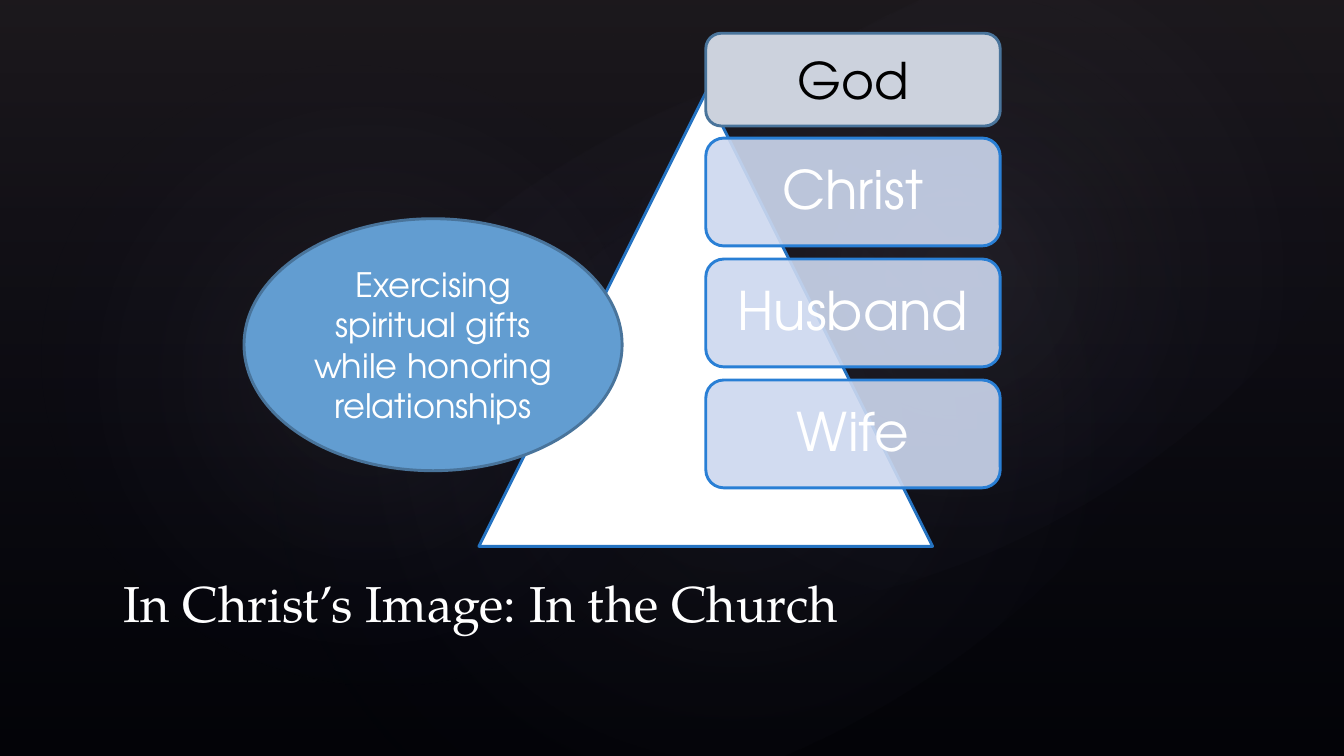
from dataclasses import dataclass

import pptx
import pptx.dml.color
import pptx.enum.shapes
import pptx.enum.text
import pptx.oxml
import pptx.oxml.ns
import pptx.shapes.autoshape
import pptx.util

Inches = pptx.util.Inches
Pt = pptx.util.Pt
RGBColor = pptx.dml.color.RGBColor
Geometry = pptx.enum.shapes.MSO_SHAPE
Anchor = pptx.enum.text.MSO_ANCHOR
Align = pptx.enum.text.PP_ALIGN
qn = pptx.oxml.ns.qn

BLACK = RGBColor(0x00, 0x00, 0x00)
WHITE = RGBColor(0xFF, 0xFF, 0xFF)
NAVY = RGBColor(0x24, 0x28, 0x52)
PLUM = RGBColor(0x50, 0x46, 0x52)
MIST = RGBColor(0xC4, 0xBC, 0xC6)
PALE_BLUE = RGBColor(0xCD, 0xD8, 0xEF)
PALE_GREY = RGBColor(0xCC, 0xD2, 0xDD)
SKY = RGBColor(0x62, 0x9D, 0xD1)
STEEL = RGBColor(0x49, 0x74, 0x9B)
BRIGHT_BLUE = RGBColor(0x29, 0x7F, 0xD5)
DEEP_BLUE = RGBColor(0x25, 0x73, 0xC1)

BODY_FONT = "TeX Gyre Adventor"
TITLE_FONT = "TeX Gyre Pagella"
OUTLINE = Pt(2.08)
Box = tuple[float, float, float, float]


@dataclass
class Stop:
    position: int
    color: RGBColor
    opacity: int


@dataclass
class Backdrop:
    geometry: Geometry
    box: Box
    rotation: float
    stops: list[Stop]
    direction: str


@dataclass
class Figure:
    geometry: Geometry
    box: Box
    fill: RGBColor
    line: RGBColor
    opacity: int = 100
    text: str = ""
    size: int = 36
    color: RGBColor = WHITE
    inset: float = 0.1
    spacing: float = 1.0


def add_plain_shape(geometry: Geometry, box: Box) -> pptx.shapes.autoshape.Shape:
    shape = slide.shapes.add_shape(geometry, *map(Inches, box))
    shape.shadow.inherit = False
    return shape


def draw_backdrop(backdrop: Backdrop) -> None:
    shape = add_plain_shape(backdrop.geometry, backdrop.box)
    shape.rotation = backdrop.rotation
    shape.line.fill.background()
    shape.fill.background()
    stops = "".join(
        f'<a:gs pos="{stop.position * 1000}"><a:srgbClr val="{stop.color}">'
        f'<a:alpha val="{stop.opacity * 1000}"/></a:srgbClr></a:gs>'
        for stop in backdrop.stops
    )
    gradient = pptx.oxml.parse_xml(
        f'<a:gradFill {pptx.oxml.ns.nsdecls("a")} rotWithShape="1">'
        f"<a:gsLst>{stops}</a:gsLst>{backdrop.direction}</a:gradFill>"
    )
    properties = shape.element.spPr
    properties.replace(properties.find(qn("a:noFill")), gradient)


def write_text(shape: pptx.shapes.autoshape.Shape, text: str, frame_format: dict,
               paragraph_format: dict, font_format: dict, color: RGBColor) -> None:
    frame = shape.text_frame
    paragraph = frame.paragraphs[0]
    run = paragraph.add_run()
    run.text = text
    run.font.color.rgb = color
    for target, values in ((frame, frame_format), (paragraph, paragraph_format),
                           (run.font, font_format)):
        for name, value in values.items():
            setattr(target, name, value)


def draw_figure(figure: Figure) -> None:
    shape = add_plain_shape(figure.geometry, figure.box)
    shape.fill.solid()
    shape.fill.fore_color.rgb = figure.fill
    if figure.opacity < 100:
        tint = shape.element.spPr.find(qn("a:solidFill"))[0]
        tint.append(pptx.oxml.parse_xml(
            f'<a:alpha {pptx.oxml.ns.nsdecls("a")} val="{figure.opacity * 1000}"/>'))
    shape.line.color.rgb = figure.line
    shape.line.width = OUTLINE
    if figure.text:
        inset = Inches(figure.inset)
        write_text(
            shape, figure.text,
            {"word_wrap": True, "vertical_anchor": Anchor.MIDDLE,
             "margin_left": inset, "margin_right": inset},
            {"alignment": Align.CENTER, "line_spacing": figure.spacing},
            {"name": BODY_FONT, "size": Pt(figure.size)}, figure.color)


presentation = pptx.Presentation()
presentation.slide_width = Inches(13.33)
presentation.slide_height = Inches(7.5)
slide = presentation.slides.add_slide(presentation.slide_layouts[6])
slide.background.fill.solid()
slide.background.fill.fore_color.rgb = BLACK

# Backdrop: a dark wash and three soft glows
DOWNWARD = '<a:lin ang="5400000" scaled="0"/>'
OUTWARD = ('<a:path path="circle">'
           '<a:fillToRect l="50000" t="50000" r="50000" b="50000"/></a:path>')
draw_backdrop(Backdrop(Geometry.RECTANGLE, (0, 0, 13.33, 7.5), 0,
                       [Stop(0, PLUM, 36), Stop(100, NAVY, 10)], DOWNWARD))
for glow_box, rotation, strength in (
    ((2, 1.14, 10.56, 6.24), 328.7, 7),
    ((0.61, 0.46, 6.06, 6.53), 294.3, 8),
    ((4.78, 0.13, 9.45, 5.2), 328.7, 8),
):
    draw_backdrop(Backdrop(Geometry.OVAL, glow_box, rotation,
                           [Stop(0, MIST, strength), Stop(58, NAVY, 0)], OUTWARD))

# Pyramid with its levels
draw_figure(Figure(Geometry.ISOSCELES_TRIANGLE, (4.75, 0.92, 4.5, 4.5), WHITE, DEEP_BLUE))
for index, level in enumerate(("Christ", "Husband", "Wife")):
    draw_figure(Figure(Geometry.ROUNDED_RECTANGLE, (7, 1.37 + 1.2 * index, 2.92, 1.07),
                       PALE_BLUE, BRIGHT_BLUE, opacity=90, text=level, size=38,
                       inset=0.16, spacing=0.9))

# Title
title = slide.shapes.add_textbox(*map(Inches, (1.13, 5.33, 11, 1)))
write_text(title, "In Christ’s Image: In the Church",
           {"word_wrap": True, "vertical_anchor": Anchor.BOTTOM},
           {"alignment": Align.LEFT}, {"name": TITLE_FONT, "size": Pt(36)}, WHITE)

# Top level and the side remark
draw_figure(Figure(Geometry.ROUNDED_RECTANGLE, (7, 0.33, 2.92, 0.92), PALE_GREY, STEEL,
                   text="God", color=BLACK))
draw_figure(Figure(Geometry.OVAL, (2.42, 2.17, 3.75, 2.5), SKY, STEEL, size=24,
                   text="Exercising spiritual gifts while honoring relationships"))

presentation.save("out.pptx")
